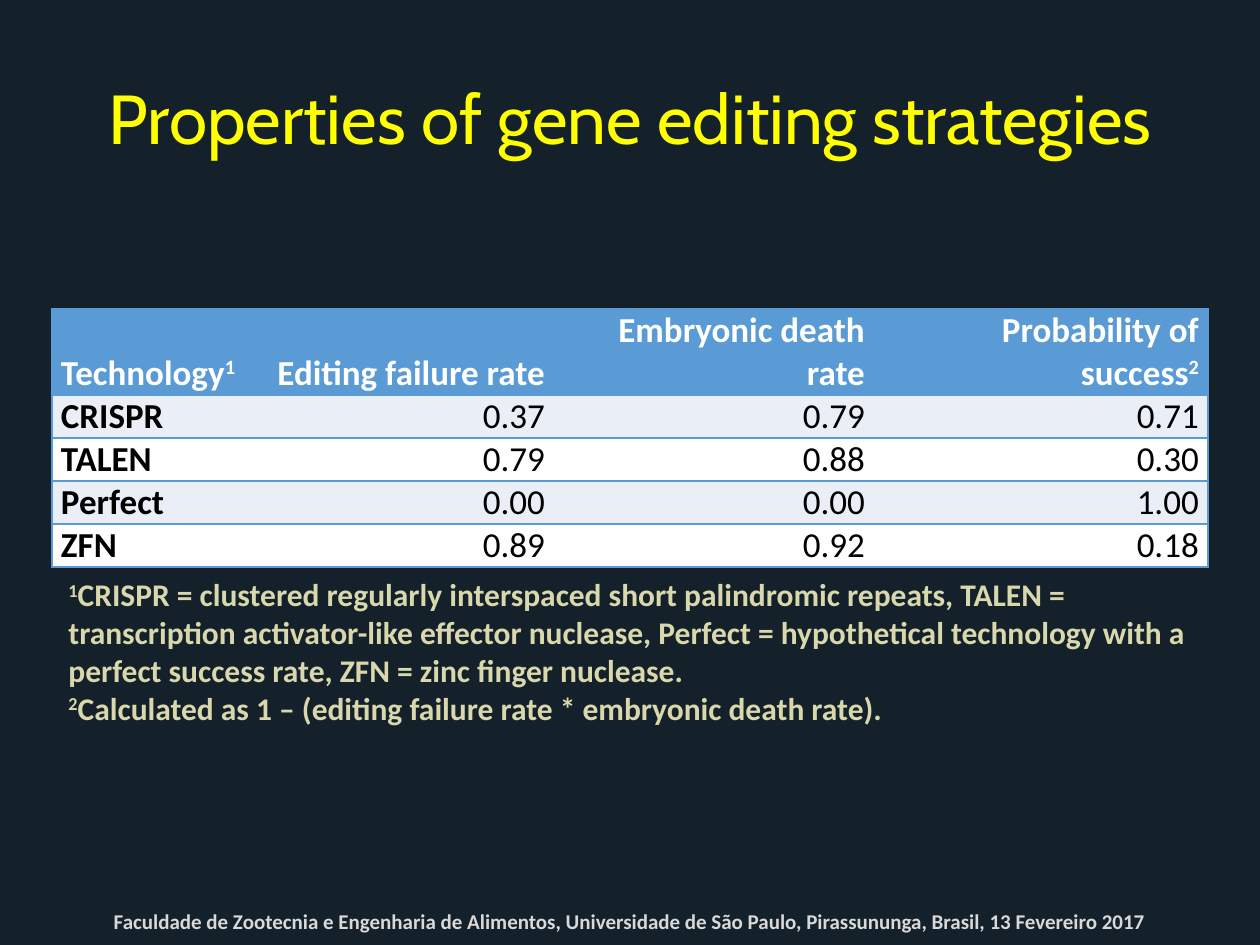
from lxml import etree
from pptx import Presentation
from pptx.dml.color import RGBColor
from pptx.enum.text import MSO_ANCHOR, PP_ALIGN
from pptx.oxml.ns import qn
from pptx.util import Emu, Pt

LEFT, CENTER, RIGHT = PP_ALIGN.LEFT, PP_ALIGN.CENTER, PP_ALIGN.RIGHT
TOP, MIDDLE, BOTTOM = MSO_ANCHOR.TOP, MSO_ANCHOR.MIDDLE, MSO_ANCHOR.BOTTOM

NAVY = RGBColor(0x14, 0x21, 0x2B)
YELLOW = RGBColor(0xFF, 0xFF, 0x00)
BLUE = RGBColor(0x5B, 0x9B, 0xD5)
PALE = RGBColor(0xEA, 0xEF, 0xF7)
WHITE = RGBColor(0xFF, 0xFF, 0xFF)
BLACK = RGBColor(0x00, 0x00, 0x00)
SAND = RGBColor(0xD9, 0xD7, 0xAC)
GREY = RGBColor(0xD9, 0xD9, 0xD9)

TITLE = "Properties of gene editing strategies"
HEADER = [
    [("Technology", 0), ("1", 30)],
    [("Editing failure rate", 0)],
    [("Embryonic death rate", 0)],
    [("Probability of success", 0), ("2", 30)],
]
STRATEGIES = [
    ("CRISPR", "0.37", "0.79", "0.71"),
    ("TALEN", "0.79", "0.88", "0.30"),
    ("Perfect", "0.00", "0.00", "1.00"),
    ("ZFN", "0.89", "0.92", "0.18"),
]
FOOTNOTES = [
    [("1", 30), ("CRISPR = clustered regularly interspaced short palindromic repeats, "
                 "TALEN = transcription activator-like effector nuclease, "
                 "Perfect = hypothetical technology with a perfect success rate, "
                 "ZFN = zinc finger nuclease.", 0)],
    [("2", 30), ("Calculated as 1 – (editing failure rate * embryonic death rate).", 0)],
]
VENUE = ("Faculdade de Zootecnia e Engenharia de Alimentos, Universidade de São Paulo, "
         "Pirassununga, Brasil, 13 Fevereiro 2017")

COL_WIDTHS = [207, 295, 320, 334]
HEADER_HEIGHT, ROW_HEIGHT = 86, 43


def px(n):
    return Emu(round(n * 914400 / 126))


def fill_paragraph(p, runs, font, size, color, bold, align):
    p.alignment = align
    p.font.name, p.font.size, p.font.bold = font, Pt(size), bold
    p.font.color.rgb = color
    for text, raised in runs:
        r = p.add_run()
        r.text = text
        if raised:
            r.font._element.set("baseline", str(raised * 1000))


def add_text(s, box, paragraphs, font, size, color, bold, align, anchor):
    tf = s.shapes.add_textbox(*map(px, box)).text_frame
    tf.word_wrap = True
    tf.vertical_anchor = anchor
    for i, runs in enumerate(paragraphs):
        p = tf.add_paragraph() if i else tf.paragraphs[0]
        fill_paragraph(p, runs, font, size, color, bold, align)


def set_borders(cell, outer_left, outer_right):
    tc_pr = cell._tc.get_or_add_tcPr()
    sides = [("lnL", outer_left), ("lnR", outer_right), ("lnT", True), ("lnB", True)]
    for i, (side, visible) in enumerate(sides):
        ln = etree.Element(qn(f"a:{side}"), w=str(Pt(1)))
        if visible:
            fill = etree.SubElement(ln, qn("a:solidFill"))
            etree.SubElement(fill, qn("a:srgbClr"), val=str(BLUE))
        else:
            etree.SubElement(ln, qn("a:noFill"))
        tc_pr.insert(i, ln)


def add_strategy_table(s, left, top):
    rows = HEADER, *([[(v, 0)] for v in row] for row in STRATEGIES)
    heights = [HEADER_HEIGHT] + [ROW_HEIGHT] * len(STRATEGIES)
    box = left, top, sum(COL_WIDTHS), sum(heights)
    table = s.shapes.add_table(len(rows), len(COL_WIDTHS), *map(px, box)).table
    for col, width in zip(table.columns, COL_WIDTHS):
        col.width = px(width)
    for i, (row, height) in enumerate(zip(rows, heights)):
        table.rows[i].height = px(height)
        header = i == 0
        for j, runs in enumerate(row):
            cell = table.cell(i, j)
            cell.margin_left = cell.margin_right = px(9)
            cell.margin_top = cell.margin_bottom = 0
            cell.vertical_anchor = BOTTOM if header else TOP
            cell.fill.solid()
            cell.fill.fore_color.rgb = BLUE if header else PALE if i % 2 else WHITE
            fill_paragraph(cell.text_frame.paragraphs[0], runs, "Calibri", 20,
                           WHITE if header else BLACK, header or j == 0,
                           RIGHT if j else LEFT)
            set_borders(cell, j == 0, j == len(row) - 1)


def main():
    prs = Presentation()
    prs.slide_width, prs.slide_height = px(1260), px(945)
    s = prs.slides.add_slide(prs.slide_layouts[6])
    s.background.fill.solid()
    s.background.fill.fore_color.rgb = NAVY

    add_text(s, (63, 38, 1134, 157), [[(TITLE, 0)]],
             "Cabin", 39.6, YELLOW, False, CENTER, MIDDLE)
    add_strategy_table(s, 52, 309)
    add_text(s, (56, 569, 1150, 165), FOOTNOTES,
             "Calibri", 18, SAND, True, LEFT, TOP)
    add_text(s, (63, 890, 1134, 50), [[(VENUE, 0)]],
             "Calibri", 12, GREY, True, CENTER, BOTTOM)
    prs.save("out.pptx")


if __name__ == "__main__":
    main()
